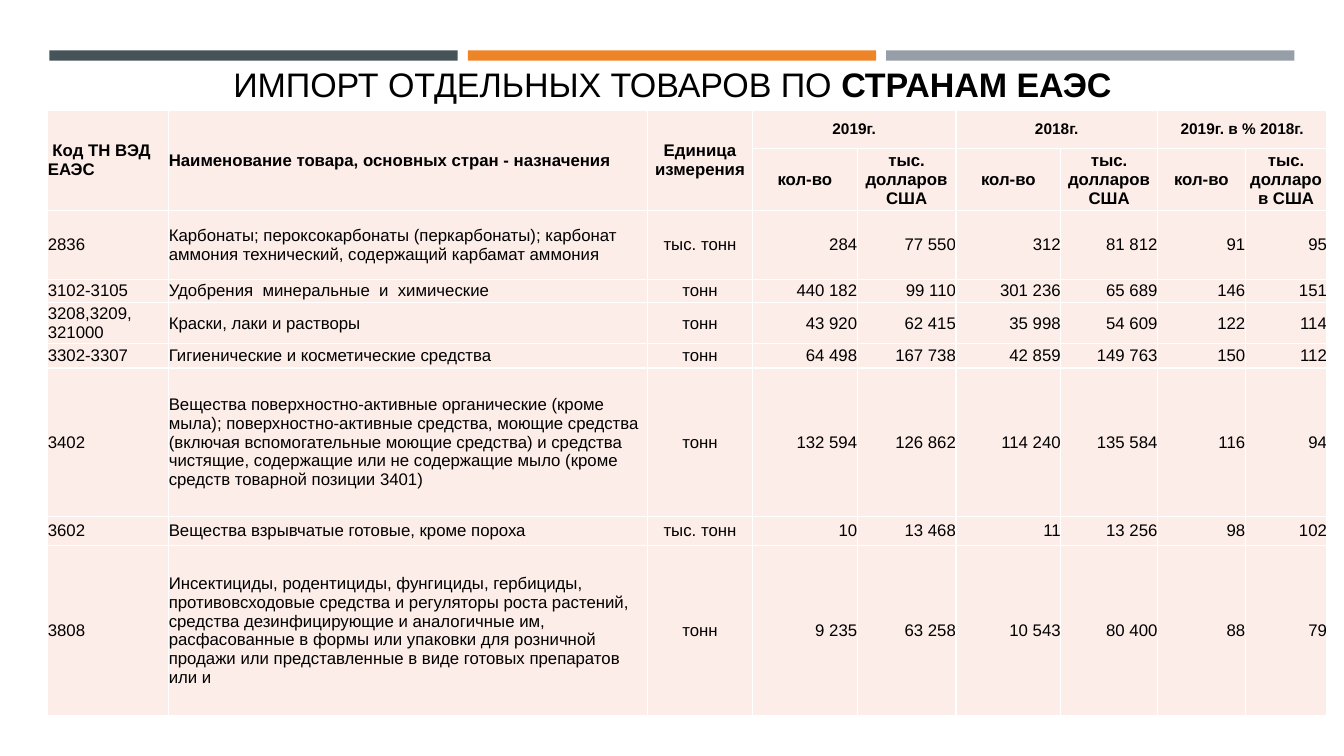
from dataclasses import dataclass

from lxml import etree
from pptx import Presentation
from pptx import util as u
from pptx.dml.color import RGBColor
from pptx.enum import shapes, text
from pptx.oxml.ns import qn


@dataclass(frozen=True)
class Theme:
    font: str = "Arial"
    ink: str = "000000"
    cell: str = "FCEDE8"
    border: str = "FFFFFF"
    bars: tuple = ("465359", "ED8428", "969FA7")
    title_size: float = 24.3
    table_size: float = 12
    period_size: float = 11
    border_width: float = 1


LEFT, CENTER, RIGHT = text.PP_ALIGN.LEFT, text.PP_ALIGN.CENTER, text.PP_ALIGN.RIGHT

# Shares of the slide's width and height, in percent
BAR_LEFT, BAR_TOP, BAR_WIDTH, BAR_HEIGHT, BAR_STEP = 3.68, 6.67, 30.38, 1.36, 31.13
TITLE_AREA = (4.8, 8.53, 90.47, 6)
TABLE_CORNER = (3.56, 14.55)
COLUMN_WIDTHS = (9, 35.63, 7.8, 7.8, 7.35, 7.8, 7.2, 6.53, 6.08)
ROW_HEIGHTS = (5.07, 8.27, 9.07, 3.07, 5.47, 3.2, 19.6, 3.87, 22.53)

HEADINGS = (" Код ТН ВЭД ЕАЭС", "Наименование товара, основных стран - назначения",
            "Единица измерения")
PERIODS = ("2019г.", "2018г.", "2019г. в % 2018г.")
MEASURES = ("кол-во", "тыс. долларов США")
GOODS = (
    ("2836", "Карбонаты; пероксокарбонаты (перкарбонаты); карбонат аммония технический, "
     "содержащий карбамат аммония",
     "тыс. тонн", "284", "77 550", "312", "81 812", "91", "95"),
    ("3102-3105", "Удобрения  минеральные  и  химические",
     "тонн", "440 182", "99 110", "301 236", "65 689", "146", "151"),
    ("3208,3209, 321000", "Краски, лаки и растворы",
     "тонн", "43 920", "62 415", "35 998", "54 609", "122", "114"),
    ("3302-3307", "Гигиенические и косметические средства",
     "тонн", "64 498", "167 738", "42 859", "149 763", "150", "112"),
    ("3402", "Вещества поверхностно-активные органические (кроме мыла); "
     "поверхностно-активные средства, моющие средства (включая вспомогательные моющие "
     "средства) и средства чистящие, содержащие или не содержащие мыло (кроме средств "
     "товарной позиции 3401)",
     "тонн", "132 594", "126 862", "114 240", "135 584", "116", "94"),
    ("3602", "Вещества взрывчатые готовые, кроме пороха",
     "тыс. тонн", "10", "13 468", "11", "13 256", "98", "102"),
    ("3808", "Инсектициды, родентициды, фунгициды, гербициды, противовсходовые средства "
     "и регуляторы роста растений, средства дезинфицирующие и аналогичные им, "
     "расфасованные в формы или упаковки для розничной продажи или представленные "
     "в виде готовых препаратов или и",
     "тонн", "9 235", "63 258", "10 543", "80 400", "88", "79"),
)


class Page:
    """Draws elements on one slide; lengths are percentages of the slide's size."""

    def __init__(self, deck, theme):
        self.deck, self.theme = deck, theme
        self.slide = deck.slides.add_slide(deck.slide_layouts[5])

    def across(self, share):
        return round(self.deck.slide_width * share / 100)

    def down(self, share):
        return round(self.deck.slide_height * share / 100)

    def area(self, left, top, width, height):
        return self.across(left), self.down(top), self.across(width), self.down(height)

    def style(self, para, size, align, bold=None):
        para.alignment = align
        font = para.font
        font.name, font.size, font.bold = self.theme.font, u.Pt(size), bold
        font.color.rgb = RGBColor.from_string(self.theme.ink)

    def bar(self, left, top, width, height, color):
        box = self.slide.shapes.add_shape(
            shapes.MSO_SHAPE.RECTANGLE, *self.area(left, top, width, height))
        box.shadow.inherit = False
        box.fill.solid()
        box.fill.fore_color.rgb = RGBColor.from_string(color)
        box.line.fill.background()

    def title(self, plain, strong, area):
        box = self.slide.shapes.title
        box.left, box.top, box.width, box.height = self.area(*area)
        frame = box.text_frame
        frame.word_wrap = True
        frame.auto_size = text.MSO_AUTO_SIZE.NONE
        frame.vertical_anchor = text.MSO_ANCHOR.BOTTOM
        para = frame.paragraphs[0]
        self.style(para, self.theme.title_size, CENTER)
        para.line_spacing = 0.9
        para.add_run().text = plain
        span = para.add_run()
        span.text, span.font.bold = strong, True

    def table(self, corner, widths, heights):
        frame = self.slide.shapes.add_table(
            len(heights), len(widths), *self.area(*corner, sum(widths), sum(heights)))
        table = frame.table
        table.first_row = table.horz_banding = False
        for column, width in zip(table.columns, widths):
            column.width = self.across(width)
        for row, height in zip(table.rows, heights):
            row.height = self.down(height)
        for cell in table.iter_cells():
            self.plain_cell(cell)
        return table

    def plain_cell(self, cell):
        cell.margin_left = cell.margin_right = cell.margin_top = cell.margin_bottom = 0
        cell.vertical_anchor = text.MSO_ANCHOR.MIDDLE
        properties = cell._tc.get_or_add_tcPr()
        for side in ("a:lnL", "a:lnR", "a:lnT", "a:lnB"):
            line = etree.SubElement(properties, qn(side), w=str(u.Pt(self.theme.border_width)))
            fill = etree.SubElement(line, qn("a:solidFill"))
            etree.SubElement(fill, qn("a:srgbClr"), val=self.theme.border)
        cell.fill.solid()
        cell.fill.fore_color.rgb = RGBColor.from_string(self.theme.cell)

    def cell_text(self, cell, words, align, bold=False, size=None):
        para = cell.text_frame.paragraphs[0]
        para.add_run().text = words
        self.style(para, size or self.theme.table_size, align, bold)


def fill_header(page, table):
    for column, (heading, align) in enumerate(zip(HEADINGS, (LEFT, LEFT, CENTER))):
        cell = table.cell(0, column)
        cell.merge(table.cell(1, column))
        page.cell_text(cell, heading, align, bold=True)
    for index, period in enumerate(PERIODS):
        column = len(HEADINGS) + index * len(MEASURES)
        cell = table.cell(0, column)
        cell.merge(table.cell(0, column + len(MEASURES) - 1))
        page.cell_text(cell, period, CENTER, bold=True, size=page.theme.period_size)
        for offset, measure in enumerate(MEASURES):
            page.cell_text(table.cell(1, column + offset), measure, CENTER, bold=True)


def fill_goods(page, table):
    aligns = (LEFT, LEFT, CENTER) + (RIGHT,) * 6
    for row, record in enumerate(GOODS, start=2):
        for column, (words, align) in enumerate(zip(record, aligns)):
            page.cell_text(table.cell(row, column), words, align)


def main():
    deck = Presentation()
    deck.slide_width, deck.slide_height = u.Inches(13.33), u.Inches(7.5)
    page = Page(deck, Theme())
    for index, color in enumerate(page.theme.bars):
        page.bar(BAR_LEFT + index * BAR_STEP, BAR_TOP, BAR_WIDTH, BAR_HEIGHT, color)
    page.title("ИМПОРТ ОТДЕЛЬНЫХ ТОВАРОВ ПО ", "СТРАНАМ ЕАЭС", TITLE_AREA)
    table = page.table(TABLE_CORNER, COLUMN_WIDTHS, ROW_HEIGHTS)
    fill_header(page, table)
    fill_goods(page, table)
    deck.save("out.pptx")


if __name__ == "__main__":
    main()
